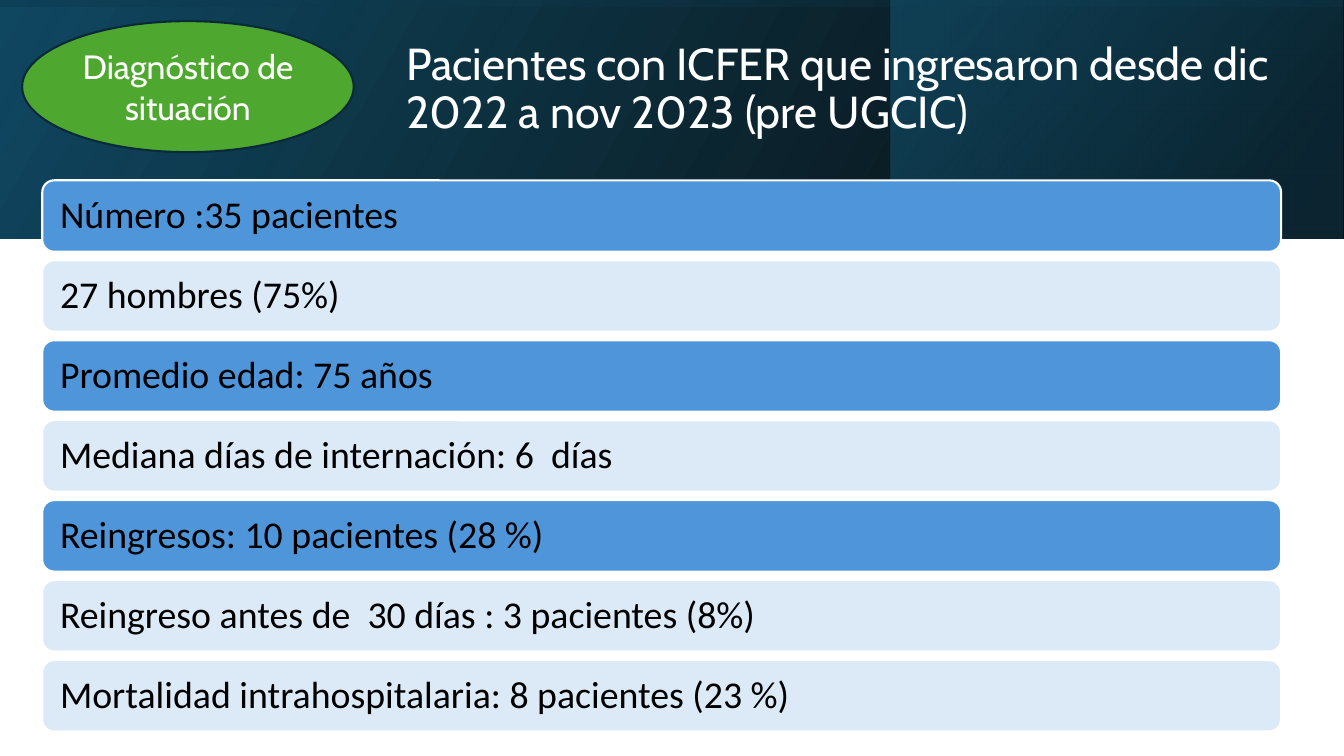
from lxml import etree
from pptx import Presentation
from pptx import util as u
from pptx.dml import color
from pptx.enum import shapes, text
from pptx.oxml import ns

WIDTH, HEIGHT, BAND = 960, 540, 170.6


def rgb(value):
    """Turn a hex string into a colour."""
    return color.RGBColor.from_string(value)


class Painter:
    """Holds the style and the current slide."""

    title_font, body_font = "Cabin", "Calibri"
    white, black = "FFFFFF", "000000"

    def __init__(self, slide):
        """Keep the slide to draw on."""
        self.slide = slide

    def add(self, kind, box):
        """Add a shadowless preset shape."""
        shape = self.slide.shapes.add_shape(kind, *map(u.Pt, box))
        shape.shadow.inherit = False
        return shape

    def gradient(self, box, stops, angle, rotation=0):
        """Add a mirrored rectangle with a translucent gradient."""
        panel = self.add(shapes.MSO_SHAPE.RECTANGLE, box)
        panel.rotation = rotation
        panel.line.fill.background()
        panel.fill.gradient()
        panel.fill.gradient_angle = 360 - angle
        for stop, (position, shade, _) in zip(panel.fill.gradient_stops, stops):
            stop.position = position / 100
            stop.color.rgb = rgb(shade)
        properties = panel._element.spPr
        properties.find(ns.qn("a:xfrm")).set("flipH", "1")
        for shade, (_, _, opacity) in zip(properties.iter(ns.qn("a:srgbClr")), stops):
            etree.SubElement(shade, ns.qn("a:alpha")).set("val", str(opacity * 1000))

    def solid(self, kind, box, fill, outline):
        """Add a plainly filled, outlined shape."""
        shape = self.add(kind, box)
        shape.fill.solid()
        shape.fill.fore_color.rgb = rgb(fill)
        shape.line.color.rgb = rgb(outline)
        shape.line.width = u.Pt(1.5)
        return shape

    def label(self, shape, words, font, size, shade, align, spacing=1.0, inset=7.2):
        """Put one vertically centred paragraph in a shape."""
        frame = shape.text_frame
        frame.word_wrap = True
        frame.vertical_anchor = text.MSO_ANCHOR.MIDDLE
        frame.margin_left = frame.margin_right = u.Pt(inset)
        paragraph = frame.paragraphs[0]
        paragraph.text = words
        paragraph.alignment = align
        paragraph.line_spacing = spacing
        paragraph.font.name = font
        paragraph.font.size = u.Pt(size)
        paragraph.font.color.rgb = rgb(shade)

    def title(self, box, words):
        """Add the slide title."""
        heading = self.slide.shapes.add_textbox(*map(u.Pt, box))
        self.label(heading, words, self.title_font, 32, self.white,
                   text.PP_ALIGN.LEFT, 0.9)

    def row(self, box, words, fill):
        """Add one rounded row of the list."""
        bar = self.solid(shapes.MSO_SHAPE.ROUNDED_RECTANGLE, box, fill, self.white)
        self.label(bar, words, self.body_font, 27, self.black,
                   text.PP_ALIGN.LEFT, 0.9, 10.2)

    def badge(self, box, words):
        """Add the green oval label."""
        oval = self.solid(shapes.MSO_SHAPE.OVAL, box, "4EA72E", "092A39")
        self.label(oval, words, self.title_font, 24, self.white, text.PP_ALIGN.CENTER)


def main():
    """Build and save the slide."""
    deck = Presentation()
    deck.slide_width, deck.slide_height = u.Pt(WIDTH), u.Pt(HEIGHT)
    painter = Painter(deck.slides.add_slide(deck.slide_layouts[6]))

    painter.gradient((0, 0, WIDTH, BAND), [(0, "000000", 96), (100, "104862", 100)], 330)
    painter.gradient((636.5, 0, 322.6, BAND), [(19, "0B3041", 68), (100, "156082", 48)], 320)
    offset = (WIDTH - BAND) / 2
    painter.gradient((offset, -offset, BAND, WIDTH),
                     [(23, "104862", 16), (99, "000000", 45)], 350, 270)

    painter.title((283, 2.2, 646.6, 123.8),
                  "Pacientes con ICFER que ingresaron desde dic 2022 a nov 2023 (pre UGCIC)")

    strong, pale = "4E95D9", "DCEAF7"
    findings = [
        ("Número :35 pacientes", strong),
        ("27 hombres (75%)", pale),
        ("Promedio edad: 75 años", strong),
        ("Mediana días de internación: 6  días", pale),
        ("Reingresos: 10 pacientes (28 %)", strong),
        ("Reingreso antes de  30 días : 3 pacientes (8%)", pale),
        ("Mortalidad intrahospitalaria: 8 pacientes (23 %)", pale),
    ]
    for index, (finding, fill) in enumerate(findings):
        painter.row((30.2, 128.8 + 57.12 * index, 884.9, 51), finding, fill)

    painter.badge((15.8, 15.1, 236.9, 93.6), "Diagnóstico de situación")
    deck.save("out.pptx")


if __name__ == "__main__":
    main()
